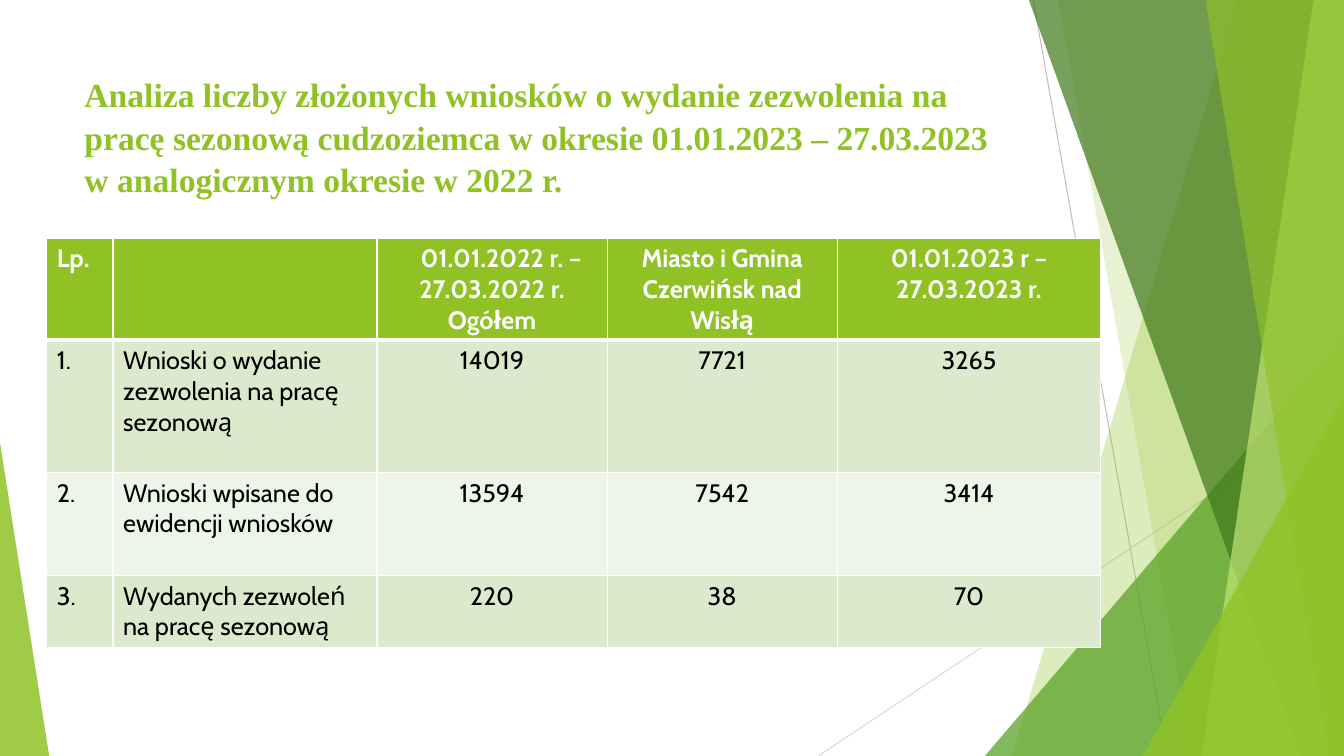
import pptx
import pptx.dml.color
import pptx.enum.shapes
import pptx.enum.text
import pptx.oxml
import pptx.oxml.ns
import pptx.util
from dataclasses import dataclass

Cm = pptx.util.Cm
Pt = pptx.util.Pt
ALIGN = pptx.enum.text.PP_ALIGN


@dataclass(frozen=True)
class Theme:
    lime: str = "90C226"
    green: str = "54A021"
    forest: str = "3F7819"
    pale: str = "C0E474"
    white: str = "FFFFFF"
    black: str = "000000"
    line_dark: str = "BFBFBF"
    line_light: str = "D9D9D9"
    bands: tuple = ("DBE9CD", "EEF4E8")
    title_font: str = "Times New Roman"
    table_font: str = "Cabin"
    title_size: int = 24
    table_size: int = 18


WIDTH, HEIGHT = 33.87, 19.05
HEADER = ["Lp.", "", "01.01.2022 r. –\n27.03.2022 r.\nOgółem",
          "Miasto i Gmina Czerwińsk nad Wisłą", "01.01.2023 r – 27.03.2023 r."]
ROWS = [
    ["1.", "Wnioski o wydanie zezwolenia na pracę sezonową", "14019", "7721", "3265"],
    ["2.", "Wnioski wpisane do ewidencji wniosków", "13594", "7542", "3414"],
    ["3.", "Wydanych zezwoleń na pracę sezonową", "220", "38", "70"],
]
COLUMN_WIDTHS = [1.67, 6.65, 5.8, 5.8, 6.64]
ROW_HEIGHTS = [2.56, 3.34, 2.6, 1.8]


def rgb(color):
    return pptx.dml.color.RGBColor.from_string(color)


def add_element(parent, tag, **attributes):
    child = parent.makeelement(pptx.oxml.ns.qn(tag), attributes)
    parent.append(child)
    return child


class SlideBuilder:
    def __init__(self, slide, theme):
        self.shapes = slide.shapes
        self.theme = theme

    def line(self, start, end, color):
        connector = self.shapes.add_connector(
            pptx.enum.shapes.MSO_CONNECTOR.STRAIGHT, *map(Cm, start + end))
        connector.line.color.rgb = rgb(color)
        connector.line.width = Pt(0.75)
        add_element(connector._element.spPr, "a:effectLst")

    def paint(self, shape, color, opacity):
        shape.shadow.inherit = False
        shape.line.fill.background()
        shape.fill.solid()
        shape.fill.fore_color.rgb = rgb(color)
        color_node = shape._element.spPr.find(".//" + pptx.oxml.ns.qn("a:srgbClr"))
        add_element(color_node, "a:alpha", val=str(opacity * 1000))

    def right_panel(self, top_x, bottom_x, color, opacity):
        """Full-height panel with a slanted left side, reaching the right edge."""
        outline = self.shapes.build_freeform(Cm(top_x), 0)
        corners = [(WIDTH, 0), (WIDTH, HEIGHT), (bottom_x, HEIGHT)]
        outline.add_line_segments([(Cm(x), Cm(y)) for x, y in corners])
        self.paint(outline.convert_to_shape(), color, opacity)

    def corner_triangle(self, left, right, top, apex, color, opacity):
        triangle = self.shapes.add_shape(
            pptx.enum.shapes.MSO_SHAPE.ISOSCELES_TRIANGLE,
            Cm(left), Cm(top), Cm(right - left), Cm(HEIGHT - top))
        triangle.adjustments[0] = apex
        self.paint(triangle, color, opacity)

    def format_text(self, frame, font, size, color, bold, align):
        for para in frame.paragraphs:
            para.alignment = align
            for span in para.runs:
                span.font.name = font
                span.font.size = Pt(size)
                span.font.bold = bold
                span.font.color.rgb = rgb(color)

    def title(self, text, left, top, width, height):
        box = self.shapes.add_textbox(*map(Cm, (left, top, width, height)))
        frame = box.text_frame
        frame.word_wrap = True
        frame.text = text
        frame.paragraphs[0].line_spacing = 1.05
        self.format_text(frame, self.theme.title_font, self.theme.title_size,
                         self.theme.lime, True, ALIGN.LEFT)

    def cell_borders(self, cell, row):
        widths = {"L": 1, "R": 1, "T": 3 if row == 1 else 1, "B": 3 if row == 0 else 1}
        properties = cell._tc.get_or_add_tcPr()
        for side, width in widths.items():
            border = add_element(properties, f"a:ln{side}", w=str(Pt(width)))
            fill = add_element(border, "a:solidFill")
            add_element(fill, "a:srgbClr", val=self.theme.white)

    def table(self, left, top, rows, column_widths, row_heights):
        theme = self.theme
        table = self.shapes.add_table(
            len(rows), len(column_widths), Cm(left), Cm(top),
            Cm(sum(column_widths)), Cm(sum(row_heights))).table
        for column, width in zip(table.columns, column_widths):
            column.width = Cm(width)
        for row, height in zip(table.rows, row_heights):
            row.height = Cm(height)
        for r, texts in enumerate(rows):
            header = r == 0
            for c, text in enumerate(texts):
                cell = table.cell(r, c)
                self.cell_borders(cell, r)
                cell.fill.solid()
                cell.fill.fore_color.rgb = rgb(theme.lime if header else theme.bands[(r - 1) % 2])
                cell.text_frame.text = text
                self.format_text(cell.text_frame, theme.table_font, theme.table_size,
                                 theme.white if header else theme.black, header,
                                 ALIGN.LEFT if c < 2 else ALIGN.CENTER)
        return table


def main():
    theme = Theme()
    deck = pptx.Presentation()
    deck.slide_width, deck.slide_height = Cm(WIDTH), Cm(HEIGHT)
    page = SlideBuilder(deck.slides.add_slide(deck.slide_layouts[6]), theme)

    # Thin background lines
    page.line((26.04, 0), (29.41, HEIGHT), theme.line_dark)
    page.line((WIDTH, 10.24), (20.62, HEIGHT), theme.line_light)

    # Translucent facets on the right, back to front
    page.right_panel(31.19, 25.5, theme.lime, 30)
    page.right_panel(26.67, 30.05, theme.lime, 20)
    page.corner_triangle(24.82, WIDTH, 8.46, 1, theme.green, 72)
    page.right_panel(25.93, 32.79, theme.forest, 70)
    page.right_panel(33.1, 30.28, theme.pale, 70)
    page.right_panel(30.38, 33.48, theme.lime, 65)
    page.corner_triangle(28.8, WIDTH, 9.98, 1, theme.lime, 80)

    # Facet on the left
    page.corner_triangle(0, 1.24, 11.15, 0, theme.lime, 85)

    # Title
    page.title("Analiza liczby złożonych wniosków o wydanie zezwolenia na pracę sezonową "
               "cudzoziemca w okresie 01.01.2023 – 27.03.2023\vw analogicznym okresie w 2022 r.",
               1.88, 1.7, 23.88, 3.18)

    # Table of applications, with the first date line indented
    table = page.table(1.18, 6.01, [HEADER] + ROWS, COLUMN_WIDTHS, ROW_HEIGHTS)
    date_para = table.cell(0, 2).text_frame.paragraphs[0]
    date_para._p.get_or_add_pPr().set("marL", str(Cm(0.45)))

    deck.save("out.pptx")


if __name__ == "__main__":
    main()
